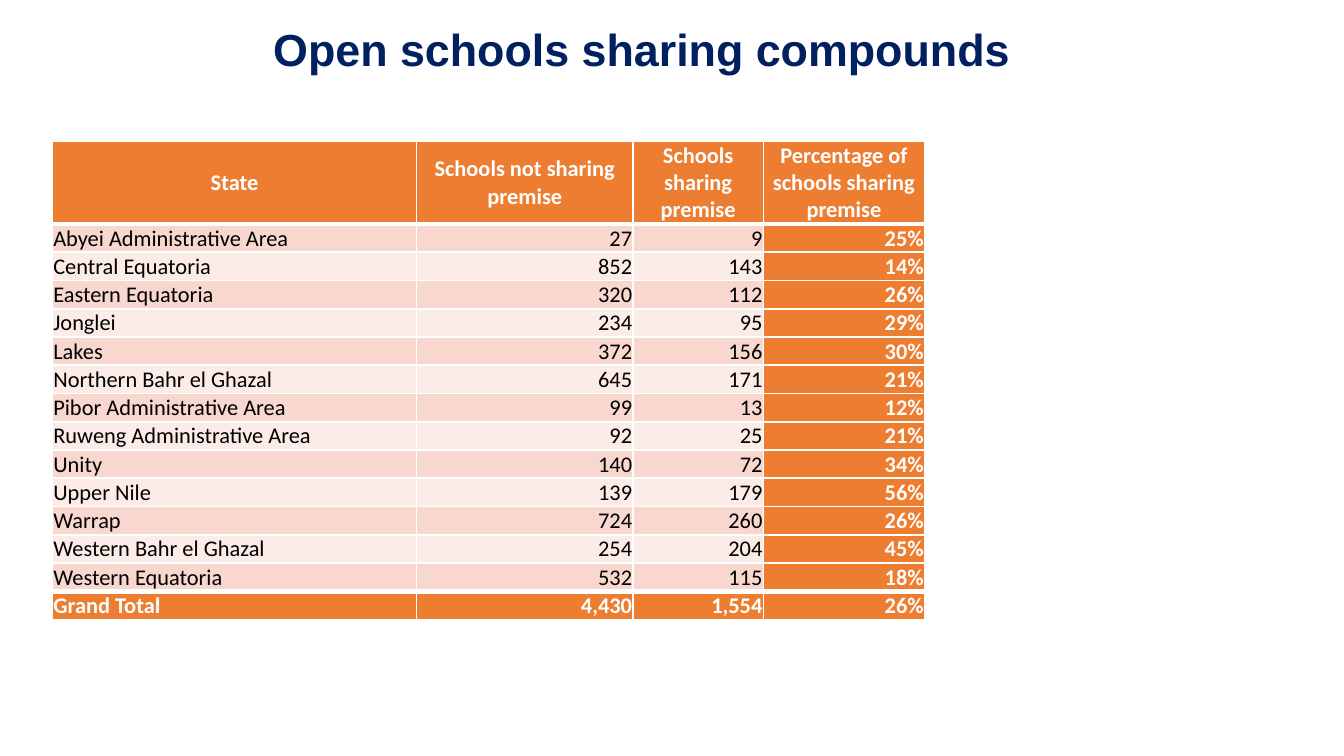
from lxml import etree
from pptx import Presentation
from pptx.dml.color import RGBColor
from pptx.enum.text import MSO_ANCHOR, MSO_AUTO_SIZE, PP_ALIGN
from pptx.oxml.ns import qn
from pptx.util import Inches, Pt

LEFT, MID, RIGHT = PP_ALIGN.LEFT, PP_ALIGN.CENTER, PP_ALIGN.RIGHT
CENTER, BASE = MSO_ANCHOR.MIDDLE, MSO_ANCHOR.BOTTOM
NO_FIT = MSO_AUTO_SIZE.NONE

TITLE = "Open schools sharing compounds "
HEADS = (
    "State",
    "Schools not sharing premise",
    "Schools sharing premise",
    "Percentage of schools sharing premise",
)
STATES = [
    ("Abyei Administrative Area", "27", "9", "25%"),
    ("Central Equatoria", "852", "143", "14%"),
    ("Eastern Equatoria", "320", "112", "26%"),
    ("Jonglei", "234", "95", "29%"),
    ("Lakes", "372", "156", "30%"),
    ("Northern Bahr el Ghazal", "645", "171", "21%"),
    ("Pibor Administrative Area", "99", "13", "12%"),
    ("Ruweng Administrative Area", "92", "25", "21%"),
    ("Unity", "140", "72", "34%"),
    ("Upper Nile", "139", "179", "56%"),
    ("Warrap", "724", "260", "26%"),
    ("Western Bahr el Ghazal", "254", "204", "45%"),
    ("Western Equatoria", "532", "115", "18%"),
]
TOTAL = ("Grand Total", "4,430", "1,554", "26%")
WIDTHS = (2.71, 1.61, 0.97, 1.2)
ROW = 0.2
WIDE = 10
COLORS = {
    "navy": "002060",
    "orange": "ED7D31",
    "dark": "F8D7CE",
    "light": "FCECE8",
    "white": "FFFFFF",
    "black": "000000",
}


def color(name):
    return RGBColor.from_string(COLORS[name])


def write(frame, text, size=12, font="Calibri", ink="black", bold=False, align=LEFT):
    para = frame.paragraphs[0]
    para.alignment = align
    run = para.add_run()
    run.text = text
    run.font.size = Pt(size)
    run.font.name = font
    run.font.bold = bold
    run.font.color.rgb = color(ink)
    return para


def edge(cell, side, width):
    props = cell._tc.get_or_add_tcPr()
    line = etree.SubElement(props, qn(f"a:ln{side}"), w=str(Pt(width)))
    fill = etree.SubElement(line, qn("a:solidFill"))
    etree.SubElement(fill, qn("a:srgbClr"), val=COLORS["white"])


def add_title(slide):
    title = slide.shapes.title
    title.left, title.top = Inches(0.17), Inches(0.05)
    title.width, title.height = Inches(9.3), Inches(0.68)
    frame = title.text_frame
    frame.auto_size = NO_FIT
    frame.word_wrap = True
    frame.vertical_anchor = CENTER
    para = write(frame, TITLE, size=24, font="Arial", ink="navy", bold=True, align=MID)
    para.line_spacing = 0.9
    para.space_after = Pt(6)


def add_grid(slide):
    rows = [HEADS, *STATES, TOTAL]
    last = len(rows) - 1
    grid = slide.shapes.add_table(
        len(rows), len(HEADS), Inches(0.39), Inches(1.05),
        Inches(sum(WIDTHS)), Inches(ROW * len(rows)),
    ).table
    grid.horz_banding = False
    for col, width in zip(grid.columns, WIDTHS):
        col.width = Inches(width)
    for r, row in enumerate(rows):
        grid.rows[r].height = Inches(ROW)
        head = r == 0
        for c, text in enumerate(row):
            cell = grid.cell(r, c)
            strong = r in (0, last) or c == len(HEADS) - 1
            top = 3 if r in (1, last) else 1
            base = 3 if r in (0, last - 1) else 1
            for side, width in (("L", 1), ("R", 1), ("T", top), ("B", base)):
                edge(cell, side, width)
            band = "dark" if r % 2 else "light"
            cell.fill.solid()
            cell.fill.fore_color.rgb = color("orange" if strong else band)
            cell.margin_left = cell.margin_right = cell.margin_top = Pt(0.5)
            cell.margin_bottom = 0
            cell.vertical_anchor = CENTER if head else BASE
            write(
                cell.text_frame, text, bold=strong,
                ink="white" if strong else "black",
                align=MID if head else RIGHT if c else LEFT,
            )


def main():
    deck = Presentation()
    deck.slide_width, deck.slide_height = Inches(WIDE), Inches(WIDE * 9 / 16)
    slide = deck.slides.add_slide(deck.slide_layouts[5])
    add_title(slide)
    add_grid(slide)
    deck.save("out.pptx")


if __name__ == "__main__":
    main()
